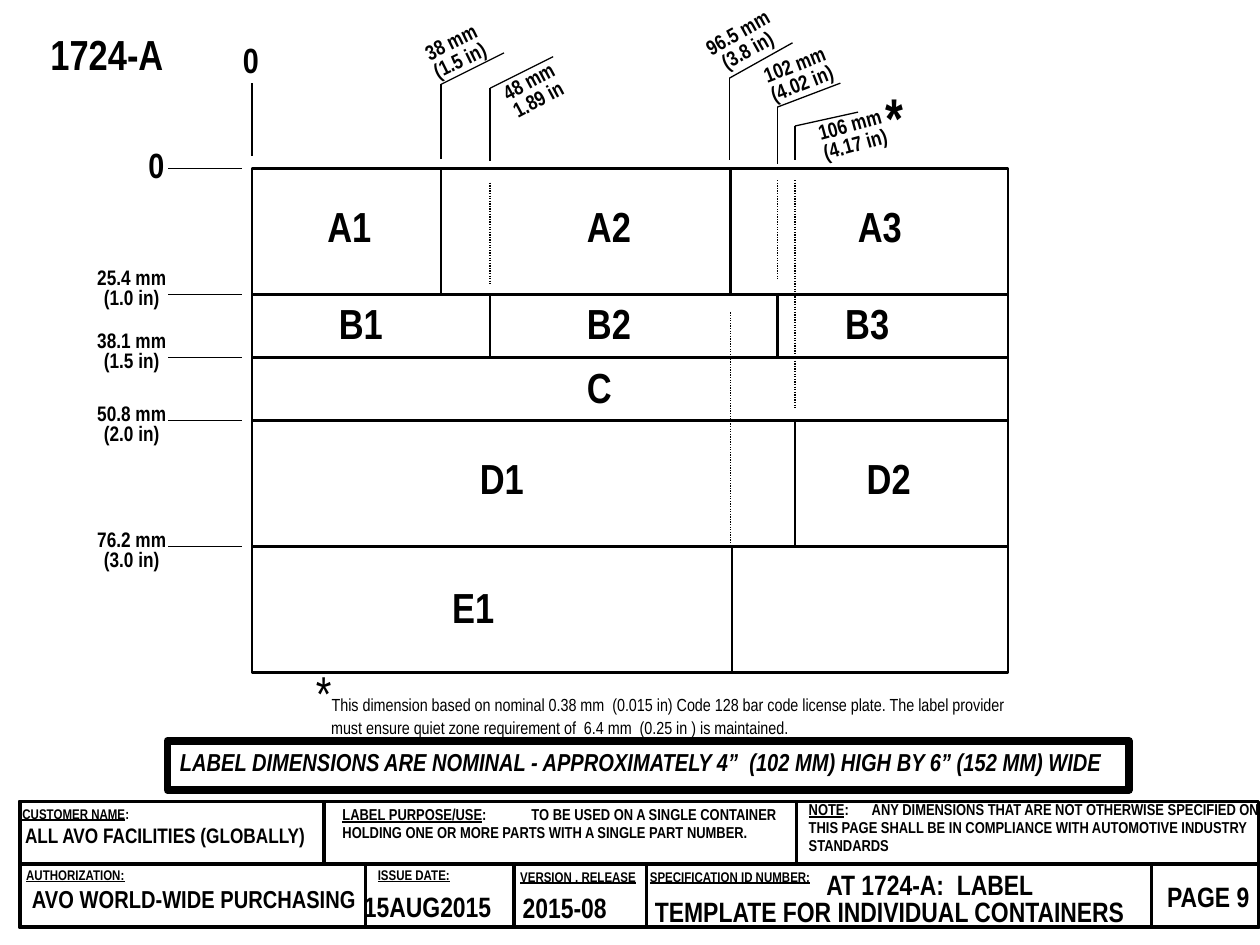
from itertools import pairwise

from lxml.etree import SubElement
from pptx import Presentation
from pptx.dml.color import RGBColor
from pptx.enum.dml import MSO_LINE
from pptx.enum.shapes import MSO_CONNECTOR, MSO_SHAPE
from pptx.enum.text import MSO_ANCHOR, MSO_AUTO_SIZE, PP_ALIGN
from pptx.oxml.ns import qn
from pptx.util import Inches, Pt

COLORS = {"ink": "000000", "paper": "FFFFFF"}
FONT = "Arial Narrow"
GRID_LEFT, GRID_TOP, GRID_RIGHT, GRID_BOTTOM = 2, 1.34, 8, 5.34
HEAVY, THIN = 1.5, 0.75
LABEL = {"size": 8, "underline": True}


def color(name):
    return RGBColor.from_string(COLORS[name])


def add_run(paragraph, text, size, **formats):
    run = paragraph.add_run()
    run.text = text
    values = {"name": FONT, "size": Pt(size), "bold": True, **formats}
    for name, value in values.items():
        setattr(run.font, name, value)
    run.font.color.rgb = color("ink")


def fill_frame(frame, paragraphs, size, wrap=True, align=PP_ALIGN.LEFT,
               spacing=1.0, **formats):
    """Each paragraph is a string or a list of (text, formats) runs."""
    settings = {"word_wrap": wrap, "auto_size": MSO_AUTO_SIZE.NONE,
                "vertical_anchor": MSO_ANCHOR.TOP}
    for name, value in settings.items():
        setattr(frame, name, value)
    for index, runs in enumerate(paragraphs):
        paragraph = frame.add_paragraph() if index else frame.paragraphs[0]
        paragraph.alignment = align
        paragraph.line_spacing = spacing
        for text, extra in ([(runs, {})] if isinstance(runs, str) else runs):
            add_run(paragraph, text, **{"size": size, **formats, **extra})


def add_text(slide, box, paragraphs, size, rotation=0, **options):
    shape = slide.shapes.add_textbox(*map(Inches, box))
    shape.rotation = rotation
    fill_frame(shape.text_frame, paragraphs, size, **options)
    return shape.text_frame.paragraphs[0]


def set_indent(paragraph, left, first=0, tab=None):
    properties = paragraph._p.get_or_add_pPr()
    properties.set("marL", str(Inches(left)))
    properties.set("indent", str(Inches(first)))
    if tab:
        tabs = SubElement(properties, qn("a:tabLst"))
        SubElement(tabs, qn("a:tab"), pos=str(Inches(tab)), algn="l")


def add_line(slide, start, end, width, dotted=False):
    line = slide.shapes.add_connector(
        MSO_CONNECTOR.STRAIGHT, *map(Inches, (*start, *end)))
    line.line.color.rgb = color("ink")
    line.line.width = Pt(width)
    if dotted:
        line.line.dash_style = MSO_LINE.ROUND_DOT
    SubElement(line._element.spPr, qn("a:effectLst"))
    return line


def add_box(slide, box, width, fill=None):
    shape = slide.shapes.add_shape(MSO_SHAPE.RECTANGLE, *map(Inches, box))
    shape.shadow.inherit = False
    if fill:
        shape.fill.solid()
        shape.fill.fore_color.rgb = color(fill)
    else:
        shape.fill.background()
    shape.line.color.rgb = color("ink")
    shape.line.width = Pt(width)
    return shape


def add_title(slide):
    title = slide.shapes.title
    title.left, title.top, title.width, title.height = map(
        Inches, (0.3, 0.18, 1.48, 0.5))
    fill_frame(title.text_frame, ["1724-A"], 24)


def add_label_grid(slide):
    frame = add_box(slide, (GRID_LEFT, GRID_TOP, GRID_RIGHT - GRID_LEFT,
                            GRID_BOTTOM - GRID_TOP), HEAVY, "paper")
    middle = (GRID_TOP + GRID_BOTTOM) / 2
    for y in (2.34, 2.84, 3.34, 4.34):
        line = add_line(slide, (GRID_LEFT, y), (GRID_RIGHT, y), HEAVY)
        if abs(y - middle) < 0.01:
            line.begin_connect(frame, 1)
            line.end_connect(frame, 3)
    # Cell dividers
    for x, top, bottom in ((3.5, 1.34, 2.34), (5.8, 1.34, 2.34),
                           (3.89, 2.34, 2.84), (6.17, 2.34, 2.84),
                           (6.31, 3.34, 4.34), (5.81, 4.34, 5.34)):
        add_line(slide, (x, top), (x, bottom), HEAVY)
    # Dotted guides
    for x, top, bottom in ((6.31, 1.43, 3.24), (6.17, 1.43, 2.22),
                           (3.89, 1.45, 2.25), (5.8, 2.48, 4.34)):
        add_line(slide, (x, top), (x, bottom), THIN, dotted=True)
    # Cell names
    rows = ((1.54, {"A1": 2.5, "A2": 4.56, "A3": 6.71}),
            (2.31, {"B1": 2.59, "B2": 4.56, "B3": 6.61}),
            (2.82, {"C": 4.56}),
            (3.54, {"D1": 3.71, "D2": 6.78}),
            (4.57, {"E1": 3.49}))
    for top, names in rows:
        for name, left in names.items():
            width = 0.55 if len(name) == 2 else 0.4
            add_text(slide, (left, top, width, 0.5), [name], 24, wrap=False)


def add_dimensions(slide):
    centered = {"align": PP_ALIGN.CENTER, "spacing": 0.8}
    # Origins
    for left, top in ((1.08, 1.09), (1.83, 0.26)):
        add_text(slide, (left, top, 0.33, 0.43), ["0"], 20, wrap=False)
    add_line(slide, (GRID_LEFT, 0.66), (GRID_LEFT, 1.24), THIN)
    # Heights
    for y in (GRID_TOP, 2.34, 2.84, 3.34, 4.34):
        add_line(slide, (1.92, y), (1.33, y), THIN)
    for top, metric, inch in ((2.09, "25.4 mm", "(1.0 in)"),
                              (2.59, "38.1 mm", "(1.5 in)"),
                              (3.17, "50.8 mm", "(2.0 in)"),
                              (4.17, "76.2 mm", "(3.0 in)")):
        add_text(slide, (0.67, top, 0.75, 0.42), [metric, inch], 12,
                 wrap=False, **centered)
    # Widths: leader x, bend y, foot y, tip y, label left, top, rotation, lines
    widths = (
        (3.5, 0.67, 1.26, 0.42, 3.16, 0.21, 333.8, "38 mm", "(1.5 in)"),
        (3.89, 0.7, 1.28, 0.45, 3.78, 0.52, 331.8, "48 mm", "1.89 in"),
        (5.79, 0.62, 1.27, 0.34, 5.44, 0.13, 330.8, "96.5 mm", "(3.8 in)"),
        (6.17, 0.85, 1.3, 0.66, 5.88, 0.39, 338.7, "102 mm", "(4.02 in)"),
        (6.31, 1, 1.27, 0.89, 6.31, 0.87, 344.5, "106 mm", "(4.17 in)"))
    for x, bend, foot, tip, left, top, rotation, metric, inch in widths:
        add_line(slide, (x, bend), (x, foot), THIN)
        add_line(slide, (x, bend), (x + 0.5, tip), THIN)
        add_text(slide, (left, top, 0.92, 0.42), [metric, inch], 12,
                 rotation, **centered)
    add_text(slide, (6.93, 0.61, 0.34, 0.63), ["*"], 32, wrap=False)


def add_notes_below_grid(slide):
    footnote = ("This dimension based on nominal 0.38 mm  (0.015 in) Code 128 "
                "bar code license plate. The label provider must ensure quiet "
                "zone requirement of  6.4 mm  (0.25 in ) is maintained.")
    paragraph = add_text(slide, (2.41, 5.3, 5.74, 0.61),
                         [[("*", {"size": 28}), (footnote, {})]], 10,
                         spacing=0.8, bold=False)
    set_indent(paragraph, 0.12, -0.12)
    banner = add_box(slide, (1.33, 5.88, 7.63, 0.39), 4.5)
    fill_frame(banner.text_frame,
               ["LABEL DIMENSIONS ARE NOMINAL - APPROXIMATELY 4”  (102 MM) "
                "HIGH BY 6” (152 MM) WIDE"], 14, wrap=False, italic=True)


def add_title_block(slide):
    # Cells
    rows = ((6.36, (0.16, 2.57, 6.32)),
            (6.86, (0.16, 2.9, 4.08, 5.13, 9.14, 9.99)))
    for top, edges in rows:
        add_box(slide, (0.16, top, 9.83, 0.5), 2)
        for left, right in pairwise(edges):
            add_box(slide, (left, top, right - left, 0.5), 2)
    # Field labels
    add_text(slide, (0.08, 6.35, 1.82, 0.22),
             [[("CUSTOMER NAME", LABEL), (":", {})]], 8, spacing=0.95)
    for left, top, width, text in (
            (0.11, 6.84, 1.2, "AUTHORIZATION:"),
            (2.9, 6.84, 1.1, "ISSUE DATE:"),
            (4.03, 6.85, 1.35, "VERSION . RELEASE"),
            (5.06, 6.85, 1.63, "SPECIFICATION ID NUMBER:")):
        add_text(slide, (left, top, width, 0.22), [text], spacing=0.95, **LABEL)
    # Field values
    for box, text, size in (
            ((0.1, 6.48, 3.09, 0.3), "ALL AVO FACILITIES (GLOBALLY)", 12),
            ((2.79, 7.01, 1.49, 0.36), "15AUG2015", 16),
            ((4.05, 7.02, 1.4, 0.36), "2015-08", 16)):
        add_text(slide, box, [text], size)
    for box, text, size in (
            ((0.06, 7.01, 2.96, 0.28), "AVO WORLD-WIDE PURCHASING", 14),
            ((9.06, 6.98, 1.06, 0.31), "PAGE 9", 16)):
        add_text(slide, box, [text], size, align=PP_ALIGN.CENTER, spacing=0.8)
    paragraph = add_text(slide, (5.1, 6.89, 3.97, 0.52),
                         ["AT 1724-A:  LABEL",
                          "TEMPLATE FOR INDIVIDUAL CONTAINERS"], 16, spacing=0.8)
    set_indent(paragraph, 1.36)
    # Purpose and note
    underlined = {"underline": True}
    purpose = add_text(
        slide, (2.62, 6.35, 4, 0.38),
        [[("LABEL PURPOSE/USE", underlined),
          (":\tTO BE USED ON A SINGLE CONTAINER", {})],
         "HOLDING ONE OR MORE PARTS WITH A SINGLE PART NUMBER."], 9, spacing=0.95)
    set_indent(purpose, 0, tab=1.29)
    note = add_text(
        slide, (6.32, 6.31, 3.78, 0.52),
        [[("NOTE", underlined),
          (":\tANY DIMENSIONS THAT ARE NOT OTHERWISE SPECIFIED ON THIS PAGE "
           "SHALL BE IN COMPLIANCE WITH AUTOMOTIVE INDUSTRY STANDARDS", {})]],
        9, spacing=0.95)
    set_indent(note, 0, tab=0.43)


def main():
    presentation = Presentation()
    presentation.slide_width, presentation.slide_height = Inches(10), Inches(7.5)
    slide = presentation.slides.add_slide(presentation.slide_layouts[5])
    add_title(slide)
    add_label_grid(slide)
    add_dimensions(slide)
    add_notes_below_grid(slide)
    add_title_block(slide)
    presentation.save("out.pptx")


if __name__ == "__main__":
    main()
